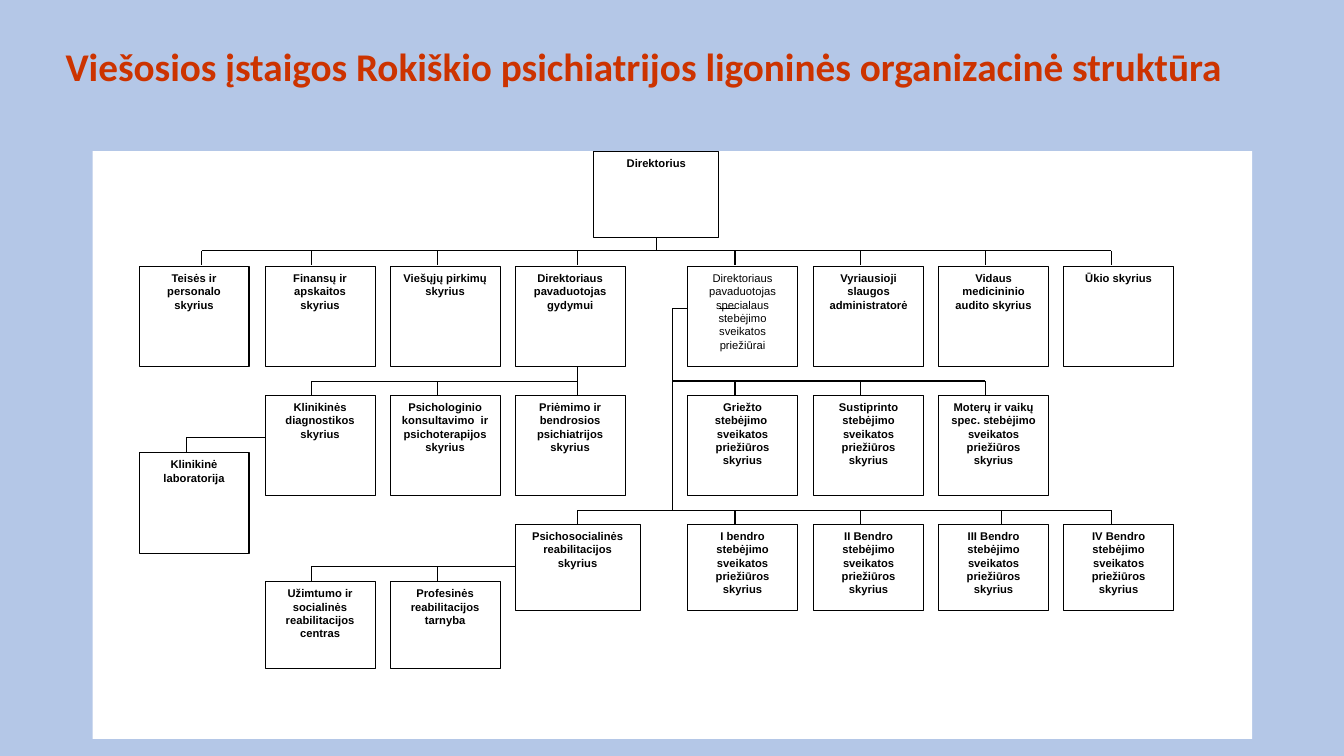
from pptx import Presentation
from pptx.dml.color import RGBColor as Rgb
from pptx.enum.shapes import MSO_CONNECTOR as Conn, MSO_SHAPE as Shape
from pptx.enum.text import MSO_ANCHOR as Anchor, MSO_AUTO_SIZE as Fit, PP_ALIGN as Align
from pptx.oxml.ns import qn
from pptx.util import Inches, Pt
from lxml import etree

HUES = {"back": "B4C7E7", "title": "CC3300", "ink": "000000", "box": "FFFFFF"}

COLS = [1.38, 2.63, 3.87, 5.11, 6.82, 8.07, 9.31, 10.55]
MIDS = [2, 3.09, 4.34, 5.73, 7.29, 8.53, 9.77, 11.02]
WIDE, NARROW = 1.24, 1.09
TALL, SHORT = 1, 0.86
DROP = 0.14
THIN, FULL = 0.5, 0.75

# Each row: top, height, and the unit name in each column; \n parts paragraphs.
ROWS = [
    (2.64, TALL, {
        0: "Teisės ir personalo skyrius",
        1: "Finansų ir apskaitos\nskyrius",
        2: "Viešųjų pirkimų skyrius",
        3: "Direktoriaus pavaduotojas gydymui",
        4: "Direktoriaus pavaduotojas specialaus stebėjimo sveikatos priežiūrai",
        5: "Vyriausioji slaugos administratorė",
        6: "Vidaus medicininio audito skyrius",
        7: "Ūkio skyrius"}),
    (3.92, TALL, {
        1: "Klinikinės\ndiagnostikos skyrius",
        2: "Psichologinio konsultavimo  ir psichoterapijos skyrius",
        3: "Priėmimo ir bendrosios psichiatrijos skyrius",
        4: "Griežto stebėjimo  sveikatos priežiūros\nskyrius",
        5: "Sustiprinto stebėjimo sveikatos priežiūros\nskyrius",
        6: "Moterų ir vaikų spec. stebėjimo sveikatos priežiūros skyrius"}),
    (4.49, TALL, {0: "Klinikinė laboratorija"}),
    (5.2, SHORT, {
        3: "Psichosocialinės reabilitacijos skyrius",
        4: "I bendro stebėjimo sveikatos priežiūros skyrius",
        5: "II Bendro stebėjimo sveikatos priežiūros skyrius",
        6: "III Bendro stebėjimo sveikatos priežiūros skyrius",
        7: "IV Bendro stebėjimo sveikatos priežiūros skyrius"}),
    (5.77, SHORT, {
        1: "Užimtumo ir socialinės reabilitacijos centras",
        2: "Profesinės reabilitacijos tarnyba"}),
]
LIGHT = ROWS[0][2][4]  # the one name that is not bold
BROAD = ROWS[3][2][3]  # the one unit with a wide box


def hue(name):
    return Rgb.from_string(HUES[name])


def add_run(par, text, font, size, color, bold):
    run = par.add_run()
    run.text = text
    run.font.name = font
    run.font.size = Pt(size)
    run.font.bold = bold
    run.font.color.rgb = hue(color)


def add_title(slide, text):
    title = slide.shapes.title
    title.left, title.top = Inches(0.55), Inches(0.2)
    title.width, title.height = Inches(11.92), Inches(0.96)
    frame = title.text_frame
    frame.word_wrap = True
    frame.auto_size = Fit.NONE
    frame.vertical_anchor = Anchor.MIDDLE
    par = frame.paragraphs[0]
    par.alignment = Align.LEFT
    par.line_spacing = 0.9
    add_run(par, text, "Calibri", 28, "title", True)


def add_rect(slide, x, y, w, h):
    rect = slide.shapes.add_shape(
        Shape.RECTANGLE, Inches(x), Inches(y), Inches(w), Inches(h))
    rect.shadow.inherit = False
    rect.fill.solid()
    rect.fill.fore_color.rgb = hue("box")
    rect.line.fill.background()
    return rect


def add_unit(slide, x, y, w, h, text):
    """Draw one framed box of the chart with its name at the top."""
    box = add_rect(slide, x, y, w, h)
    box.line.color.rgb = hue("ink")
    box.line.width = Pt(FULL)
    frame = box.text_frame
    frame.word_wrap = True
    frame.vertical_anchor = Anchor.TOP
    for i, part in enumerate(text.split("\n")):
        par = frame.add_paragraph() if i else frame.paragraphs[0]
        par.alignment = Align.CENTER
        add_run(par, part, "Arial", 8, "ink", text != LIGHT)


def add_line(slide, x1, y1, x2, y2, width=FULL):
    line = slide.shapes.add_connector(
        Conn.STRAIGHT, Inches(x1), Inches(y1), Inches(x2), Inches(y2))
    line.line.color.rgb = hue("ink")
    line.line.width = Pt(width)
    etree.SubElement(line._element.spPr, qn("a:effectLst"))


def add_bus(slide, y, start, end, drops, width=FULL, thin=()):
    """Draw a level line with short drops to the boxes below it."""
    add_line(slide, start, y, end, y, width)
    for x in drops:
        add_line(slide, x, y, x, y + DROP, THIN if x in thin else FULL)


def main():
    deck = Presentation()
    deck.slide_width, deck.slide_height = Inches(13.33), Inches(7.5)
    slide = deck.slides.add_slide(deck.slide_layouts[5])
    slide.background.fill.solid()
    slide.background.fill.fore_color.rgb = hue("back")

    add_title(slide, "Viešosios įstaigos Rokiškio psichiatrijos ligoninės "
                     "organizacinė struktūra")
    add_rect(slide, 0.92, 1.5, 11.5, 5.83)
    add_unit(slide, 5.89, 1.5, WIDE, SHORT, "Direktorius")
    for top, high, units in ROWS:
        for col, text in units.items():
            wide = WIDE if text == BROAD else NARROW
            add_unit(slide, COLS[col], top, wide, high, text)

    # Director to the first row
    add_line(slide, 6.51, 2.36, 6.51, 2.49)
    add_bus(slide, 2.49, MIDS[0], MIDS[7], MIDS,
            thin=MIDS[1:4] + MIDS[6:])

    # Deputy for treatment, and the laboratory
    add_line(slide, MIDS[3], 3.64, MIDS[3], 3.78)
    add_bus(slide, 3.78, MIDS[1], MIDS[3], MIDS[1:4], THIN)
    add_bus(slide, 4.34, 1.85, COLS[1], [1.85])

    # Deputy for special observation
    trunk = 6.67
    add_line(slide, trunk, 3.06, COLS[4], 3.06)
    add_line(slide, 7.13, 3.06, MIDS[4], 3.06)
    add_line(slide, trunk, 3.06, trunk, 5.06)
    add_bus(slide, 3.78, trunk, MIDS[6], MIDS[4:7])
    add_bus(slide, 5.06, MIDS[3], MIDS[7], MIDS[3:6] + [9.93, MIDS[7]])

    # Psychosocial rehabilitation
    add_bus(slide, 5.62, MIDS[1], COLS[3], MIDS[1:3])
    deck.save("out.pptx")


if __name__ == "__main__":
    main()
